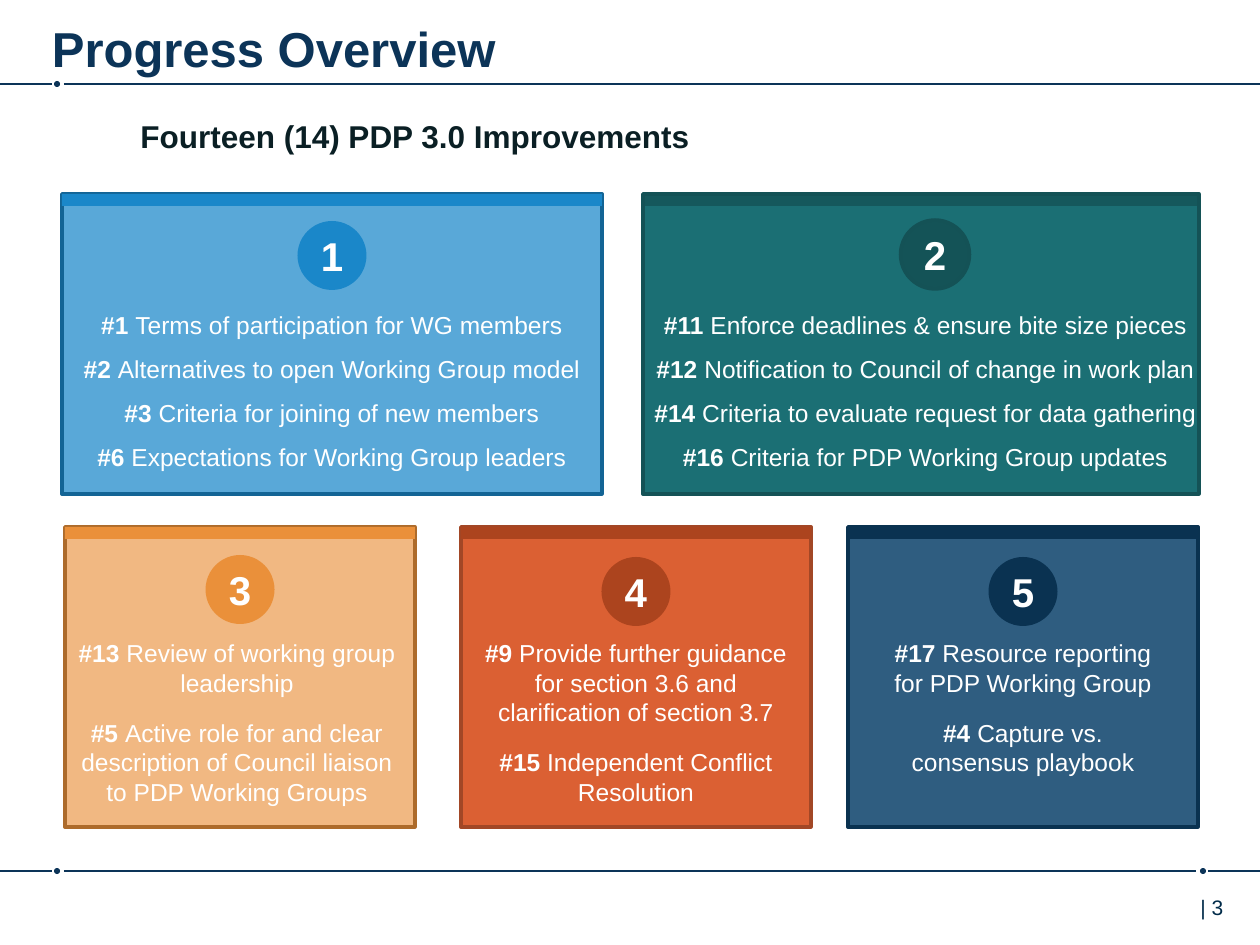
from lxml import etree
from pptx import Presentation
from pptx.dml.color import RGBColor
from pptx.enum.shapes import MSO_CONNECTOR, MSO_SHAPE
from pptx.enum.text import MSO_ANCHOR, PP_ALIGN
from pptx.oxml.ns import qn
from pptx.util import Pt

RECTANGLE, ELLIPSE = MSO_SHAPE.RECTANGLE, MSO_SHAPE.OVAL
STRAIGHT = MSO_CONNECTOR.STRAIGHT
LEFT, CENTER = PP_ALIGN.LEFT, PP_ALIGN.CENTER
TOP, MIDDLE = MSO_ANCHOR.TOP, MSO_ANCHOR.MIDDLE

EMU_PER_PX = 914400 / 126
NAVY, WHITE = "0C3458", "FFFFFF"
FONT = "Arial"

TITLE = "Progress Overview"
SUBTITLE = "Fourteen (14) PDP 3.0 Improvements"
PAGE = "| 3"

RULES = [
    {"y": 84, "segments": [(0, 52), (64, 1260)], "dots": [57]},
    {"y": 871, "segments": [(0, 52), (64, 1196), (1208, 1260)], "dots": [57, 1203]},
]

ROWS = [
    {"top": 194, "strip": 12, "text_top": 289, "text_height": 185, "line_spacing": 1.5, "gap": 0},
    {"top": 527, "strip": 12, "text_top": 632, "text_height": 182, "line_spacing": 1, "gap": 12},
]

PANELS = [
    {"row": 0, "left": 62, "width": 540, "fill": ("1A87C9", 72), "line": "136495",
     "accent": ("1A87C9", 100), "badge": (0, 27), "text": (62, 540),
     "items": [("#1", "Terms of participation for WG members"),
               ("#2", "Alternatives to open Working Group model"),
               ("#3", "Criteria for joining of new members"),
               ("#6", "Expectations for Working Group leaders")]},
    {"row": 0, "left": 643, "width": 556, "fill": ("1B6F74", 100), "line": "145256",
     "accent": ("145357", 80), "badge": (14, 26), "badge_line": "145256", "text": (640, 571),
     "items": [("#11", "Enforce deadlines & ensure bite size pieces"),
               ("#12", "Notification to Council of change in work plan"),
               ("#14", "Criteria to evaluate request for data gathering"),
               ("#16", "Criteria for PDP Working Group updates")]},
    {"row": 1, "left": 65, "width": 350, "fill": ("EA903A", 63), "line": "AD6B2B",
     "accent": ("EA903A", 100), "badge": (0, 28), "text": (62, 350),
     "items": [("#13", "Review of working group leadership"),
               ("#5", "Active role for and clear description of Council liaison "
                      "to PDP Working Groups")]},
    {"row": 1, "left": 461, "width": 350, "fill": ("DB6033", 100), "line": "A24726",
     "accent": ("AC441E", 100), "badge": (0, 30), "text": (461, 350),
     "items": [("#9", "Provide further guidance for section 3.6 and "
                      "clarification of section 3.7"),
               ("#15", "Independent Conflict Resolution")]},
    {"row": 1, "left": 848, "width": 350, "fill": ("0D436C", 86), "line": "0A3250",
     "accent": ("0A3251", 100), "badge": (0, 30), "text": (880, 286),
     "items": [("#17", "Resource reporting for PDP Working Group"),
               ("#4", "Capture vs. consensus playbook")]},
]
BADGE_SIZE = 69


def px(*lengths):
    return [round(length * EMU_PER_PX) for length in lengths]


def color(value):
    return RGBColor.from_string(value)


def add_shape(slide, kind, box, fill, opacity=100, line=None):
    shape = slide.shapes.add_shape(kind, *px(*box))
    shape.shadow.inherit = False
    shape.fill.solid()
    shape.fill.fore_color.rgb = color(fill)
    if opacity < 100:
        fill_color = shape.fill._xPr.find(qn("a:solidFill"))[0]
        etree.SubElement(fill_color, qn("a:alpha"), val=str(opacity * 1000))
    if line:
        shape.line.color.rgb = color(line)
        shape.line.width = Pt(2)
    else:
        shape.line.fill.background()
    return shape


def style(paragraph, size, font_color, bold=None, alignment=CENTER):
    paragraph.alignment = alignment
    paragraph.font.name = FONT
    paragraph.font.size = Pt(size)
    paragraph.font.bold = bold
    paragraph.font.color.rgb = color(font_color)


def add_text_frame(slide, box, wrap=True):
    frame = slide.shapes.add_textbox(*px(*box)).text_frame
    frame.word_wrap = wrap
    return frame


def add_rule(slide, y, segments, dots):
    for start, end in segments:
        connector = slide.shapes.add_connector(STRAIGHT, *px(start, y, end, y))
        connector.line.color.rgb = color(NAVY)
        connector.line.width = Pt(1)
        etree.SubElement(connector._element.spPr, qn("a:effectLst"))
    for center in dots:
        add_shape(slide, ELLIPSE, (center - 3, y - 3, 6, 6), NAVY)


def add_panel(slide, number, panel):
    row = ROWS[panel["row"]]
    left, top, width = panel["left"], row["top"], panel["width"]
    add_shape(slide, RECTANGLE, (left, top, width, 300), *panel["fill"], line=panel["line"])
    add_shape(slide, RECTANGLE, (left, top, width, row["strip"]), *panel["accent"])

    shift, drop = panel["badge"]
    badge_left = left + (width - BADGE_SIZE) / 2 + shift
    badge = add_shape(slide, ELLIPSE, (badge_left, top + drop, BADGE_SIZE, BADGE_SIZE),
                      panel["accent"][0], line=panel.get("badge_line"))
    frame = badge.text_frame
    frame.margin_left = frame.margin_right = frame.margin_top = frame.margin_bottom = 0
    frame.vertical_anchor = MIDDLE
    frame.word_wrap = False
    frame.text = str(number)
    style(frame.paragraphs[0], 23, WHITE, True)

    text_left, text_width = panel["text"]
    frame = add_text_frame(slide, (text_left, row["text_top"], text_width, row["text_height"]))
    for index, (label, description) in enumerate(panel["items"]):
        paragraph = frame.add_paragraph() if index else frame.paragraphs[0]
        paragraph.line_spacing = row["line_spacing"]
        if index:
            paragraph.space_before = Pt(row["gap"])
        style(paragraph, 14, WHITE)
        label_run = paragraph.add_run()
        label_run.text = label + " "
        label_run.font.bold = True
        paragraph.add_run().text = description


def main():
    """Build the progress overview slide."""
    presentation = Presentation()
    presentation.slide_width, presentation.slide_height = px(1260, 945)
    slide = presentation.slides.add_slide(presentation.slide_layouts[5])

    title = slide.shapes.title
    title.left, title.top, title.width, title.height = px(52, 6, 1104, 62)
    frame = title.text_frame
    frame.margin_left = frame.margin_right = frame.margin_bottom = 0
    frame.margin_top = px(12)[0]
    frame.vertical_anchor = TOP
    frame.text = TITLE
    style(frame.paragraphs[0], 28, NAVY, True, LEFT)

    for rule in RULES:
        add_rule(slide, **rule)
    for number, panel in enumerate(PANELS, 1):
        add_panel(slide, number, panel)

    frame = add_text_frame(slide, (125, 111, 580, 50), wrap=False)
    frame.text = SUBTITLE
    style(frame.paragraphs[0], 18, "0A1F24", True)

    frame = add_text_frame(slide, (1188, 888, 72, 50))
    frame.text = PAGE
    style(frame.paragraphs[0], 12, "002B49", alignment=LEFT)

    presentation.save("out.pptx")


if __name__ == "__main__":
    main()
